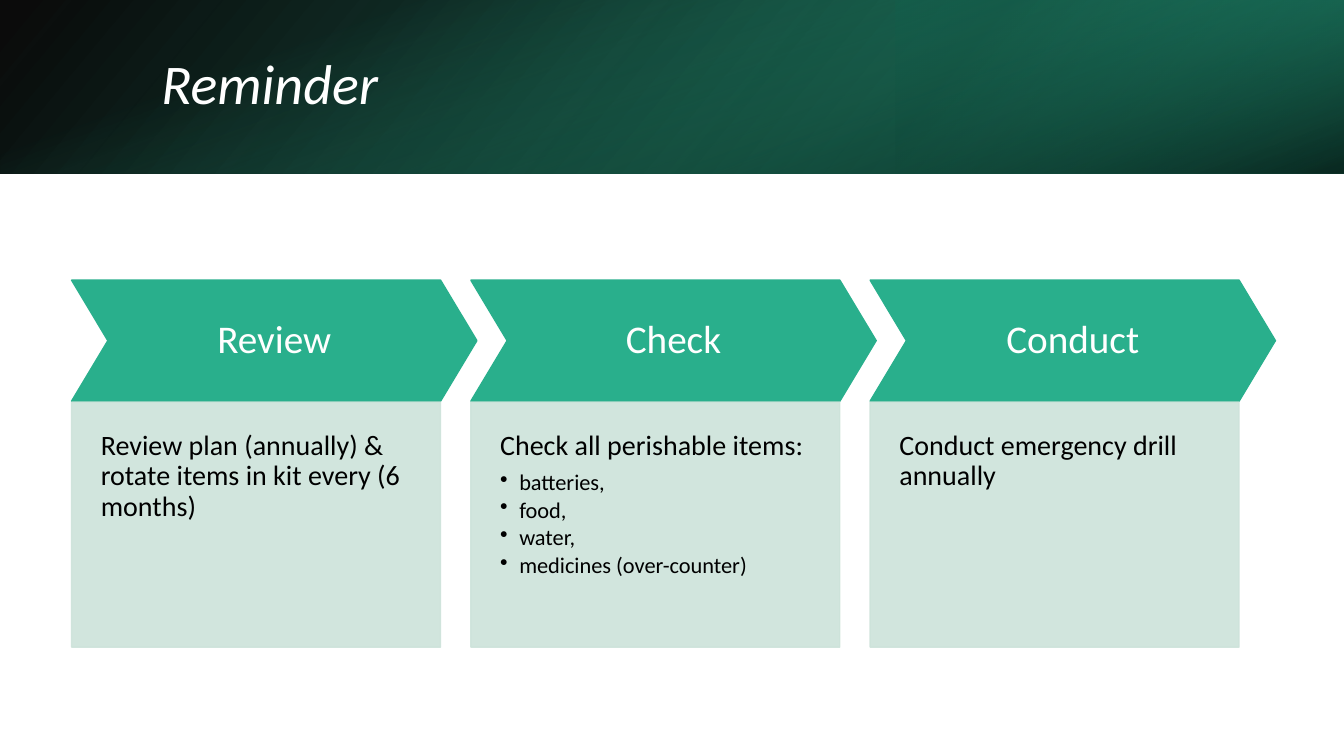
from lxml import etree
from pptx import Presentation
from pptx import util as u
from pptx.dml.color import RGBColor
from pptx.enum import shapes, text
from pptx.oxml import ns

# Content
TITLE = "Reminder"
STEPS = [
    ("Review", "Review plan (annually) & rotate items in kit every (6 months)", []),
    ("Check", "Check all perishable items:",
     ["batteries,", "food,", "water,", "medicines (over-counter)"]),
    ("Conduct", "Conduct emergency drill annually", []),
]


class Theme:
    font = "Calibri"
    white, black = "FFFFFF", "000000"
    accent, card = "29AF8C", "CDE3DA"
    card_opacity = 90
    title, heading, body, bullet = 40, 28, 20, 16


# Layout, in inches
WIDTH, HEIGHT = 13.33, 7.5
BAND_H = 1.72
LEFT, TOP = 0.71, 2.78
COL_W, GAP = 3.66, 0.3
CHEVRON_H, CARD_TOP, CARD_H = 1.2, 3.99, 2.43
POINT = 0.3  # chevron tip as a share of its height
INDENT = 0.19

# Header layers: box, rotation, flipped, angle, stops (position, colour, opacity)
BANDS = [
    ((0, 0, WIDTH, BAND_H), 0, True, 140,
     [(0, Theme.black, 96), (100, "1F8369", 100)]),
    ((WIDTH * 2 / 3, 0, WIDTH / 3, BAND_H), 180, True, 320,
     [(19, "155746", 68), (100, Theme.accent, 79)]),
    (((WIDTH - BAND_H) / 2, (BAND_H - WIDTH) / 2, BAND_H, WIDTH), 90, False, 340,
     [(23, Theme.accent, 0), (99, Theme.black, 74)]),
]


def add_box(slide, kind, box):
    sp = slide.shapes.add_shape(kind, *[u.Inches(v) for v in box])
    sp.shadow.inherit = False
    return sp


def set_opacity(color_el, percent):
    etree.SubElement(color_el, ns.qn("a:alpha"), val=str(percent * 1000))


def paint(sp, color, opacity=100):
    sp.line.width = u.Pt(1)
    for fill in (sp.fill, sp.line.fill):
        fill.solid()
        fill.fore_color.rgb = RGBColor.from_string(color)
    if opacity < 100:
        for el in sp._element.spPr.iter(ns.qn("a:srgbClr")):
            set_opacity(el, opacity)


def paint_gradient(sp, angle, stops):
    sp.line.fill.background()
    sp.fill.solid()
    grad = etree.Element(ns.qn("a:gradFill"))
    gs_list = etree.SubElement(grad, ns.qn("a:gsLst"))
    for pos, color, opacity in stops:
        gs = etree.SubElement(gs_list, ns.qn("a:gs"), pos=str(pos * 1000))
        set_opacity(etree.SubElement(gs, ns.qn("a:srgbClr"), val=color), opacity)
    etree.SubElement(grad, ns.qn("a:lin"), ang=str(angle * 60000), scaled="0")
    sp_pr = sp._element.spPr
    sp_pr.replace(sp_pr.find(ns.qn("a:solidFill")), grad)


def set_frame(sp, anchor, margins):
    tf = sp.text_frame
    tf.word_wrap = True
    tf.auto_size = text.MSO_AUTO_SIZE.NONE
    tf.vertical_anchor = anchor
    tf.margin_left, tf.margin_top, tf.margin_right, tf.margin_bottom = [
        u.Inches(m) for m in margins]
    return tf


def write(p, words, size, color, align=text.PP_ALIGN.LEFT, after=0.0):
    p.alignment = align
    p.line_spacing = 0.9
    p.space_before = u.Pt(0)
    p.space_after = u.Pt(size * after)
    r = p.add_run()
    r.text = words
    r.font.name, r.font.size = Theme.font, u.Pt(size)
    r.font.color.rgb = RGBColor.from_string(color)
    return r


def add_bullet(p):
    p.level = 1
    p_pr = p._p.get_or_add_pPr()
    p_pr.set("marL", str(u.Inches(INDENT)))
    p_pr.set("indent", str(-u.Inches(INDENT)))
    etree.SubElement(p_pr, ns.qn("a:buChar"), char="•")


def add_header(slide):
    for box, rotation, flipped, angle, stops in BANDS:
        sp = add_box(slide, shapes.MSO_SHAPE.RECTANGLE, box)
        sp.rotation = rotation
        if flipped:
            sp._element.spPr.find(ns.qn("a:xfrm")).set("flipH", "1")
        paint_gradient(sp, angle, stops)

    # Title sits above the header layers
    title = slide.shapes.title
    title.left, title.top, title.width, title.height = [
        u.Inches(v) for v in (1.5, 0.38, 10.98, 0.96)]
    tf = set_frame(title, text.MSO_ANCHOR.MIDDLE, (0.1, 0.05, 0.1, 0.05))
    write(tf.paragraphs[0], TITLE, Theme.title, Theme.white).font.italic = True
    slide.shapes._spTree.append(title._element)


def add_step(slide, column, heading, body, bullets):
    x = LEFT + column * (COL_W + GAP)

    # Chevron, its tip reaching past the card
    sp = add_box(slide, shapes.MSO_SHAPE.CHEVRON,
                 (x, TOP, COL_W + POINT * CHEVRON_H, CHEVRON_H))
    sp.adjustments[0] = POINT
    paint(sp, Theme.accent)
    tf = set_frame(sp, text.MSO_ANCHOR.MIDDLE, (0.15,) * 4)
    write(tf.paragraphs[0], heading, Theme.heading, Theme.white, text.PP_ALIGN.CENTER)

    # Card with its text
    sp = add_box(slide, shapes.MSO_SHAPE.RECTANGLE, (x, CARD_TOP, COL_W, CARD_H))
    paint(sp, Theme.card, Theme.card_opacity)
    tf = set_frame(sp, text.MSO_ANCHOR.TOP, (0.29, 0.29, 0.29, 0.58))
    write(tf.paragraphs[0], body, Theme.body, Theme.black, after=0.35)
    for item in bullets:
        p = tf.add_paragraph()
        write(p, item, Theme.bullet, Theme.black, after=0.15)
        add_bullet(p)


def main():
    prs = Presentation()
    prs.slide_width, prs.slide_height = u.Inches(WIDTH), u.Inches(HEIGHT)
    slide = prs.slides.add_slide(prs.slide_layouts.get_by_name("Title Only"))
    add_header(slide)
    for column, step in enumerate(STEPS):
        add_step(slide, column, *step)
    prs.save("out.pptx")


if __name__ == "__main__":
    main()
